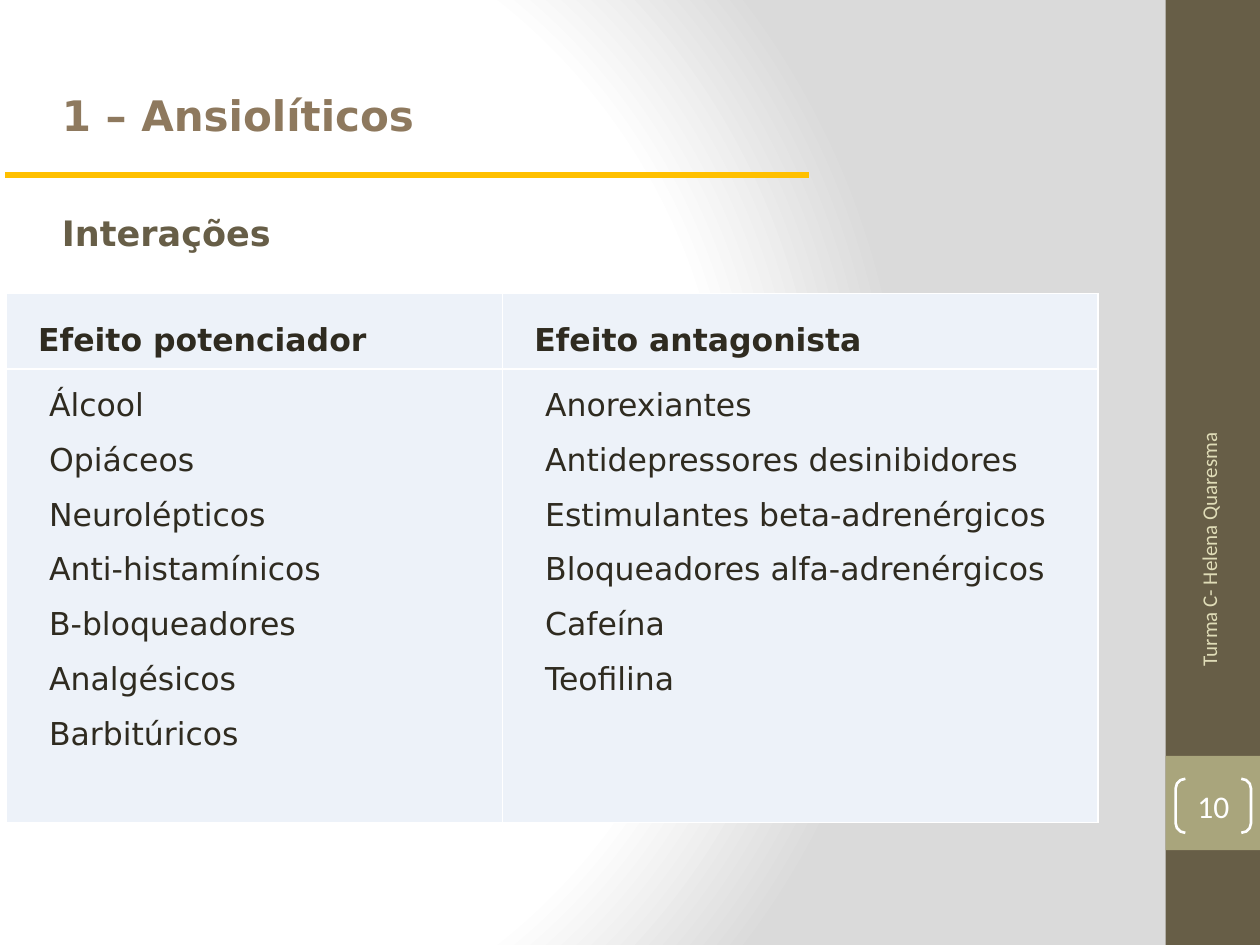
from pptx import Presentation
from pptx import util as u
from pptx.dml.color import RGBColor
from pptx.enum import shapes, text
from pptx.oxml import parse_xml
from pptx.oxml.ns import nsdecls, qn

COLORS = {
    "white": "FFFFFF", "shade": "DADADA", "brown": "675E47", "olive": "A9A57C",
    "title": "8E795E", "gold": "FFC000", "cell": "EDF2F9", "ink": "2F2B20",
    "footer": "DFDCB7",
}
ALIGN = text.PP_ALIGN
MIDDLE = text.MSO_ANCHOR.MIDDLE
EFFECTS = ["Efeito potenciador", "Efeito antagonista"]
DRUGS = [
    ["Álcool", "Opiáceos", "Neurolépticos", "Anti-histamínicos",
     "B-bloqueadores", "Analgésicos", "Barbitúricos"],
    ["Anorexiantes", "Antidepressores desinibidores",
     "Estimulantes beta-adrenérgicos", "Bloqueadores alfa-adrenérgicos",
     "Cafeína", "Teofilina"],
]


class SlideBuilder:
    """Holds the text style and the current page, and adds elements to it."""

    def __init__(self, page, font="DejaVu Sans"):
        self.page = page
        self.font = font

    def color(self, name):
        return RGBColor.from_string(COLORS[name])

    def background(self):
        self.page.background.fill.solid()
        properties = self.page.element.find(".//" + qn("p:bgPr"))
        stops = "".join(
            f'<a:gs pos="{position}"><a:srgbClr val="{COLORS[name]}"/></a:gs>'
            for position, name in [(0, "white"), (75000, "white"), (100000, "shade")])
        properties[0] = parse_xml(
            f'<a:gradFill {nsdecls("a")} rotWithShape="1"><a:gsLst>{stops}</a:gsLst>'
            '<a:path path="circle"><a:fillToRect l="20000" t="50000" r="100000" '
            'b="50000"/></a:path></a:gradFill>')

    def paragraph(self, para, words, size, color, bold=False, font=None, align=None):
        para.add_run().text = words
        para.font.name = font or self.font
        para.font.size = u.Pt(size)
        para.font.bold = bold
        para.font.color.rgb = self.color(color)
        para.alignment = align

    def indent(self, para, left, first):
        properties = para._p.get_or_add_pPr()
        properties.set("marL", str(u.Cm(left)))
        properties.set("indent", str(u.Cm(first)))

    def shape(self, kind, bounds, fill=None, line=None):
        shape = self.page.shapes.add_shape(kind, *map(u.Cm, bounds))
        shape.shadow.inherit = False
        if fill:
            shape.fill.solid()
            shape.fill.fore_color.rgb = self.color(fill)
        else:
            shape.fill.background()
        if line:
            shape.line.color.rgb = self.color(line)
            shape.line.width = u.Pt(1.5)
        else:
            shape.line.fill.background()
        return shape

    def rule(self, left, right, top, color, width):
        line = self.page.shapes.add_connector(
            shapes.MSO_CONNECTOR.STRAIGHT, *map(u.Cm, (left, top, right, top)))
        line.line.color.rgb = self.color(color)
        line.line.width = u.Pt(width)
        line._element.spPr.append(parse_xml(f'<a:effectLst {nsdecls("a")}/>'))

    def label(self, bounds, words, size, color, anchor=text.MSO_ANCHOR.TOP,
              rotation=0, spacing=None, **style):
        box = self.page.shapes.add_textbox(*map(u.Cm, bounds))
        box.rotation = rotation
        frame = box.text_frame
        frame.word_wrap = True
        frame.vertical_anchor = anchor
        para = frame.paragraphs[0]
        para.line_spacing = spacing
        self.paragraph(para, words, size, color, **style)

    def badge(self, bounds, words):
        badge = self.shape(shapes.MSO_SHAPE.DOUBLE_BRACKET, bounds, line="white")
        badge.adjustments[0] = 0.18
        frame = badge.text_frame
        frame.margin_left = frame.margin_right = 0
        frame.margin_top = frame.margin_bottom = 0
        frame.vertical_anchor = MIDDLE
        self.paragraph(frame.paragraphs[0], words, 18, "white", font="Calibri",
                       align=ALIGN.CENTER)

    def cell(self, cell, lines, left, first, before=0, **style):
        cell.margin_left = cell.margin_right = u.Cm(0.13)
        cell.margin_top = cell.margin_bottom = 0
        cell.fill.solid()
        cell.fill.fore_color.rgb = self.color("cell")
        for index, side in enumerate(("lnL", "lnR", "lnT", "lnB")):
            cell._tc.get_or_add_tcPr().insert(index, parse_xml(
                f'<a:{side} {nsdecls("a")} w="{u.Pt(1)}"><a:solidFill>'
                f'<a:srgbClr val="{COLORS["white"]}"/></a:solidFill></a:{side}>'))
        frame = cell.text_frame
        for index, words in enumerate(lines):
            para = frame.add_paragraph() if index else frame.paragraphs[0]
            para.line_spacing = 1.5
            para.space_before = u.Pt(0 if index else before)
            self.indent(para, left, first)
            self.paragraph(para, words, 18, "ink", **style)

    def table(self, left, top, widths, heights):
        table = self.page.shapes.add_table(
            len(heights), len(widths),
            *map(u.Cm, (left, top, sum(widths), sum(heights)))).table
        table.first_row = table.horz_banding = False
        for row, height in zip(table.rows, heights):
            row.height = u.Cm(height)
        header_indents = [(0.76, -0.25), (0.51, 0)]
        aligns = [ALIGN.JUSTIFY, ALIGN.LEFT]
        for index, width in enumerate(widths):
            table.columns[index].width = u.Cm(width)
            header = table.cell(0, index)
            header.vertical_anchor = MIDDLE
            self.cell(header, [EFFECTS[index]], *header_indents[index], bold=True)
            self.cell(table.cell(1, index), DRUGS[index], 1.24, -0.51, before=6,
                      align=aligns[index])


def main():
    deck = Presentation()
    deck.slide_width, deck.slide_height = u.Cm(25.4), u.Cm(19.05)
    builder = SlideBuilder(deck.slides.add_slide(deck.slide_layouts[6]))
    builder.background()
    rectangle = shapes.MSO_SHAPE.RECTANGLE
    builder.shape(rectangle, (23.5, 0, 1.9, 19.05), fill="brown")
    builder.shape(rectangle, (23.5, 15.24, 1.9, 1.9), fill="olive")
    builder.rule(0.1, 16.31, 3.53, "gold", 3.75)
    builder.label((1, 0.74, 23.4, 2.2), "1 – Ansiolíticos", 24, "title",
                  anchor=text.MSO_ANCHOR.BOTTOM, bold=True)
    builder.label((1, 4.11, 23.4, 1.07), "Interações", 20, "brown",
                  spacing=u.Pt(25), bold=True, align=ALIGN.JUSTIFY)
    builder.table(0.13, 5.92, [10, 12], [1.52, 9.14])
    builder.label((21.08, 11.25, 6.58, 1.02), "Turma C- Helena Quaresma", 12,
                  "footer", anchor=MIDDLE, rotation=270, font="Calibri",
                  align=ALIGN.RIGHT)
    builder.badge((23.7, 15.7, 1.52, 1.09), "10")
    deck.save("out.pptx")


if __name__ == "__main__":
    main()
